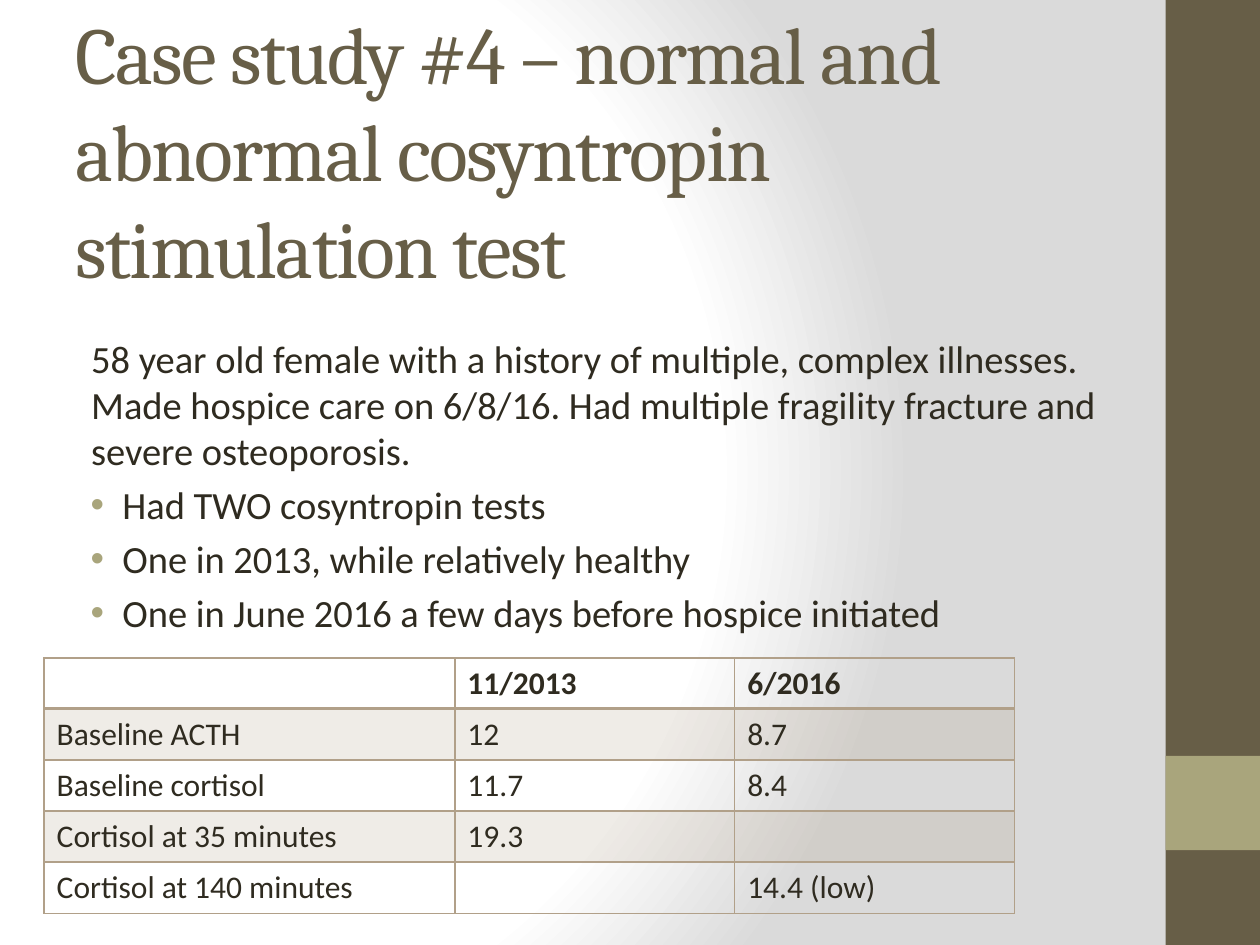
from lxml import etree
from pptx import Presentation
from pptx.dml.color import RGBColor
from pptx.enum.shapes import MSO_SHAPE
from pptx.enum.text import MSO_ANCHOR
from pptx.oxml import parse_xml
from pptx.oxml.ns import nsdecls, qn
from pptx.util import Cm, Pt

RECT = MSO_SHAPE.RECTANGLE
MIDDLE = MSO_ANCHOR.MIDDLE
BROWN = RGBColor(0x67, 0x5E, 0x47)
OLIVE = RGBColor(0xA9, 0xA5, 0x7C)
INK = RGBColor(0x2F, 0x2B, 0x20)
TAN = RGBColor(0xB1, 0xA0, 0x89)
WHITE = RGBColor(0xFF, 0xFF, 0xFF)
GRAY = RGBColor(0xDA, 0xDA, 0xDA)

WIDE, HIGH = 25.4, 19.05
BAR = 23.5
TITLE = "Case study #4 – normal and abnormal cosyntropin stimulation test"
INTRO = ("58 year old female with a history of multiple, complex illnesses. "
         "Made hospice care on 6/8/16. Had multiple fragility fracture and "
         "severe osteoporosis.")
POINTS = [
    "Had TWO cosyntropin tests",
    "One in 2013, while relatively healthy",
    "One in June 2016 a few days before hospice initiated",
]
ROWS = [
    ("", "11/2013", "6/2016"),
    ("Baseline ACTH", "12", "8.7"),
    ("Baseline cortisol", "11.7", "8.4"),
    ("Cortisol at 35 minutes", "19.3", ""),
    ("Cortisol at 140 minutes", "", "14.4 (low)"),
]
COLS = [8.28, 5.64, 5.64]
ROW = 1.03
STOPS = [(0, WHITE), (75, WHITE), (100, GRAY)]


def set_back(slide):
    """Fill the slide with a round gradient."""
    slide.background.fill.solid()
    old = next(slide.background._cSld.iter(qn("a:solidFill")))
    stops = "".join(f'<a:gs pos="{pos * 1000}"><a:srgbClr val="{color}"/></a:gs>'
                    for pos, color in STOPS)
    new = parse_xml(
        f'<a:gradFill {nsdecls("a")} rotWithShape="1"><a:gsLst>{stops}</a:gsLst>'
        '<a:path path="circle"><a:fillToRect l="20000" t="50000" r="100000" '
        'b="50000"/></a:path></a:gradFill>')
    old.getparent().replace(old, new)


def add_bar(slide, top, high, color):
    bar = slide.shapes.add_shape(RECT, Cm(BAR), Cm(top), Cm(WIDE - BAR), Cm(high))
    bar.shadow.inherit = False
    bar.fill.solid()
    bar.fill.fore_color.rgb = color
    bar.line.fill.background()


def add_box(slide, top, high):
    box = slide.shapes.add_textbox(Cm(1.27), Cm(top), Cm(21.16), Cm(high))
    box.text_frame.word_wrap = True
    return box.text_frame


def style(para, name, size, color, bold=False):
    font = para.font
    font.name, font.size, font.bold = name, Pt(size), bold
    font.color.rgb = color


def set_bullet(para):
    props = para._p.get_or_add_pPr()
    props.set("marL", str(Cm(0.95)))
    props.set("indent", str(-Cm(0.64)))
    mark = [
        f'<a:buClr {nsdecls("a")}><a:srgbClr val="{OLIVE}"/></a:buClr>',
        f'<a:buFont {nsdecls("a")} typeface="Arial"/>',
        f'<a:buChar {nsdecls("a")} char="•"/>',
    ]
    font = props.find(qn("a:defRPr"))
    for xml in mark:
        font.addprevious(parse_xml(xml))


def set_edges(cell, top, low):
    props = cell._tc.get_or_add_tcPr()
    for side, width in zip("LRTB", (1, 1, top, low)):
        line = etree.SubElement(props, qn(f"a:ln{side}"), w=str(Pt(width)))
        fill = etree.SubElement(line, qn("a:solidFill"))
        etree.SubElement(fill, qn("a:srgbClr"), val=str(TAN))


def set_fill(cell, shaded):
    if not shaded:
        cell.fill.background()
        return
    cell.fill.solid()
    cell.fill.fore_color.rgb = TAN
    color = next(cell._tc.tcPr.find(qn("a:solidFill")).iter(qn("a:srgbClr")))
    etree.SubElement(color, qn("a:alpha"), val="20000")


def add_title(slide):
    frame = add_box(slide, 1.42, 3.18)
    frame.vertical_anchor = MIDDLE
    para = frame.paragraphs[0]
    run = para.add_run()
    run.text = TITLE
    run._r.get_or_add_rPr().set("spc", "-100")
    style(para, "Cambria", 46, BROWN)


def add_body(slide):
    frame = add_box(slide, 4.45, 13.34)
    frame.margin_top = Cm(2.3)
    for num, text in enumerate([INTRO] + POINTS):
        para = frame.add_paragraph() if num else frame.paragraphs[0]
        para.text = text
        style(para, "Calibri", 22, INK)
        if num:
            para.space_before = Pt(4.4)
            set_bullet(para)
        else:
            para._p.get_or_add_pPr().set("marL", str(Cm(0.32)))


def add_grid(slide):
    table = slide.shapes.add_table(len(ROWS), len(COLS), Cm(0.89), Cm(13.26),
                                   Cm(sum(COLS)), Cm(ROW * len(ROWS))).table
    table.horz_banding = False
    for col, wide in zip(table.columns, COLS):
        col.width = Cm(wide)
    for r, row in enumerate(ROWS):
        table.rows[r].height = Cm(ROW)
        for c, text in enumerate(row):
            cell = table.cell(r, c)
            cell.text = text
            style(cell.text_frame.paragraphs[0], "Calibri", 18, INK, r == 0)
            set_edges(cell, 2 if r == 1 else 1, 2 if r == 0 else 1)
            set_fill(cell, r % 2 == 1)


def main():
    deck = Presentation()
    deck.slide_width, deck.slide_height = Cm(WIDE), Cm(HIGH)
    slide = deck.slides.add_slide(deck.slide_layouts[6])
    set_back(slide)
    add_bar(slide, 0, HIGH, BROWN)
    add_bar(slide, 15.24, WIDE - BAR, OLIVE)
    add_title(slide)
    add_body(slide)
    add_grid(slide)
    deck.save("out.pptx")


if __name__ == "__main__":
    main()
